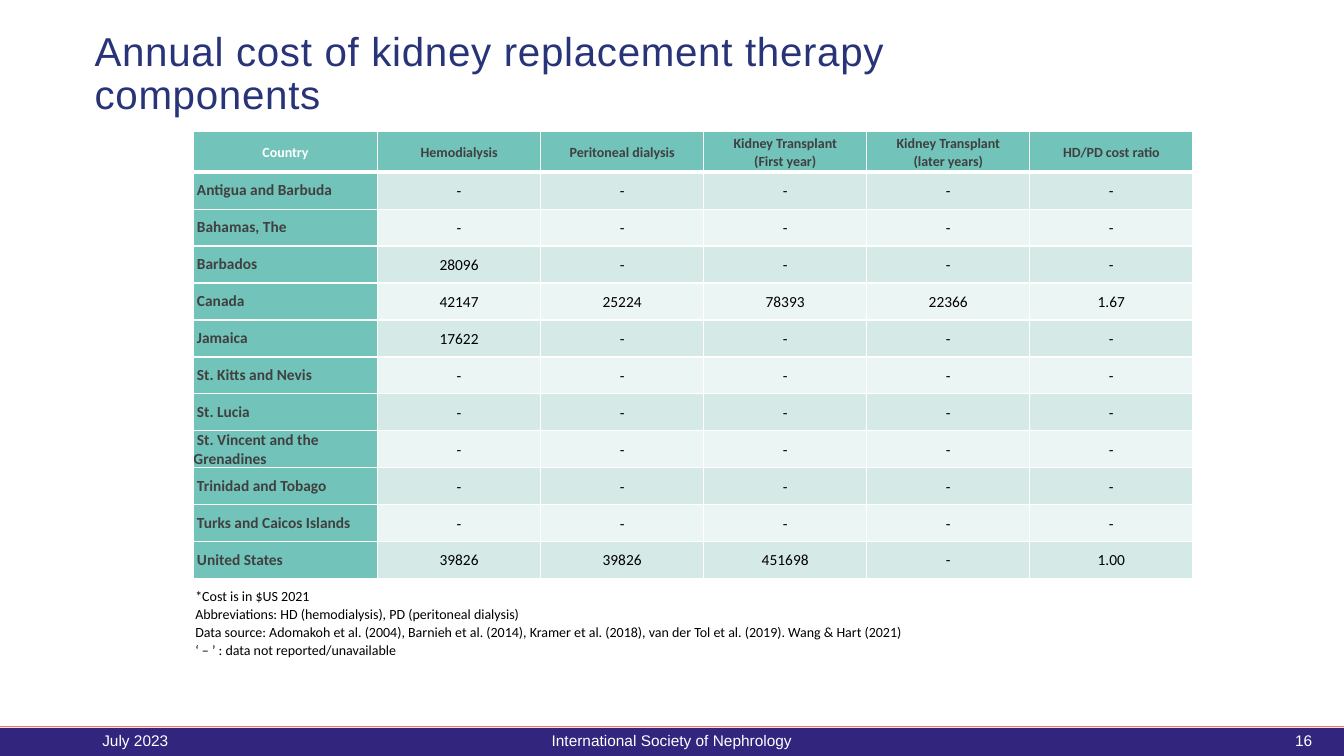
from lxml import etree
from pptx import Presentation
from pptx.dml.color import RGBColor
from pptx.enum.shapes import MSO_CONNECTOR, MSO_SHAPE
from pptx.enum.text import MSO_ANCHOR, PP_ALIGN
from pptx.oxml.ns import qn
from pptx.util import Pt

LEFT, CENTER, RIGHT = PP_ALIGN.LEFT, PP_ALIGN.CENTER, PP_ALIGN.RIGHT
TOP, MIDDLE = MSO_ANCHOR.TOP, MSO_ANCHOR.MIDDLE
RECT, LINE = MSO_SHAPE.RECTANGLE, MSO_CONNECTOR.STRAIGHT
WIDTH, HEIGHT = 960, 540
WHITE, BLACK, GRAY = "FFFFFF", "000000", "404040"
NAVY, INDIGO, CORAL = "283378", "32257E", "FE7055"
TEAL, BANDS = "72C3B9", ("D5E9E6", "EBF5F3")

HEADS = ["Country", "Hemodialysis", "Peritoneal dialysis",
         "Kidney Transplant\n(First year)", "Kidney Transplant\n(later years)",
         "HD/PD cost ratio"]
COSTS = {
    "Antigua and Barbuda": {},
    "Bahamas, The": {},
    "Barbados": {1: "28096"},
    "Canada": {1: "42147", 2: "25224", 3: "78393", 4: "22366", 5: "1.67"},
    "Jamaica": {1: "17622"},
    "St. Kitts and Nevis": {},
    "St. Lucia": {},
    "St. Vincent and the Grenadines": {},
    "Trinidad and Tobago": {},
    "Turks and Caicos Islands": {},
    "United States": {1: "39826", 2: "39826", 3: "451698", 5: "1.00"},
}
NOTES = """*Cost is in $US 2021
Abbreviations: HD (hemodialysis), PD (peritoneal dialysis)
Data source: Adomakoh et al. (2004), Barnieh et al. (2014), Kramer et al. (2018), \
van der Tol et al. (2019). Wang & Hart (2021)
‘ – ’ : data not reported/unavailable"""


def rgb(code):
    return RGBColor.from_string(code)


def style(frame, text, size, font, color, align=LEFT, bold=False, space=1):
    frame.text = text
    for par in frame.paragraphs:
        par.alignment = align
        par.line_spacing = space
        for run in par.runs:
            run.font.size = Pt(size)
            run.font.name = font
            run.font.bold = bold
            run.font.color.rgb = rgb(color)


def add_text(slide, x, y, w, h, text, size, font, color,
             align=LEFT, anchor=MIDDLE, space=1):
    box = slide.shapes.add_textbox(Pt(x), Pt(y), Pt(w), Pt(h))
    frame = box.text_frame
    frame.word_wrap = True
    frame.vertical_anchor = anchor
    style(frame, text, size, font, color, align, space=space)
    return frame


def add_edges(cell, top=1, bottom=1):
    props = cell._tc.get_or_add_tcPr()
    for side, width in (("L", 1), ("R", 1), ("T", top), ("B", bottom)):
        edge = etree.SubElement(props, qn(f"a:ln{side}"), w=str(Pt(width)))
        fill = etree.SubElement(edge, qn("a:solidFill"))
        etree.SubElement(fill, qn("a:srgbClr"), val=WHITE)


def fill_cell(cell, text, size, color, fill, pad, align=CENTER, bold=False,
              space=1, top=1, bottom=1):
    cell.vertical_anchor = MIDDLE
    cell.margin_left = cell.margin_right = Pt(pad)
    cell.margin_top, cell.margin_bottom = Pt(min(pad, 0.7)), Pt(0)
    style(cell.text_frame, text, size, "Calibri", color, align, bold, space)
    add_edges(cell, top, bottom)
    cell.fill.solid()
    cell.fill.fore_color.rgb = rgb(fill)


def add_costs(slide):
    widths = [131.5] + [116.5] * 5
    heights = [28.8] + [26.4] * len(COSTS)
    frame = slide.shapes.add_table(len(heights), len(widths), Pt(138.2), Pt(94.2),
                                   Pt(sum(widths)), Pt(sum(heights)))
    table = frame.table
    for col, width in zip(table.columns, widths):
        col.width = Pt(width)
    for row, height in zip(table.rows, heights):
        row.height = Pt(height)

    # Header row
    for c, head in enumerate(HEADS):
        fill_cell(table.cell(0, c), head, 10, GRAY if c else WHITE, TEAL, 2,
                  bold=True, space=1.06, bottom=3)

    # Country rows
    for r, (name, costs) in enumerate(COSTS.items(), 1):
        top = 3 if r == 1 else 1
        first = table.cell(r, 0)
        fill_cell(first, name, 11, GRAY, TEAL, 0, LEFT, bold=True, top=top)
        par = first.text_frame.paragraphs[0]
        par._p.get_or_add_pPr().set("indent", str(Pt(2.5)))
        for c in range(1, len(HEADS)):
            fill_cell(table.cell(r, c), costs.get(c, "-"), 11, BLACK,
                      BANDS[(r - 1) % 2], 0.7, top=top)


def add_footer(slide):
    bar = slide.shapes.add_shape(RECT, Pt(0), Pt(520), Pt(WIDTH), Pt(20))
    bar.shadow.inherit = False
    bar.fill.solid()
    bar.fill.fore_color.rgb = rgb(INDIGO)
    bar.line.fill.background()

    rule = slide.shapes.add_connector(LINE, Pt(0), Pt(519), Pt(WIDTH), Pt(519))
    rule.line.color.rgb = rgb(CORAL)
    rule.line.width = Pt(0.75)
    etree.SubElement(rule._element.spPr, qn("a:effectLst"))

    for x, w, text, align in ((66, 216, "July 2023", LEFT),
                              (318, 324, "International Society of Nephrology", CENTER),
                              (678, 266.5, "16", RIGHT)):
        add_text(slide, x, 514.8, w, 28.8, text, 11, "Arial", WHITE, align)


def main():
    deck = Presentation()
    deck.slide_width, deck.slide_height = Pt(WIDTH), Pt(HEIGHT)
    slide = deck.slides.add_slide(deck.slide_layouts[6])

    add_footer(slide)
    add_costs(slide)

    # Notes below the table
    add_text(slide, 132.4, 415.4, 594, 58.3, NOTES, 10, "Calibri", BLACK,
             anchor=TOP, space=1.07)

    # Title with slightly spaced letters
    title = add_text(slide, 60.5, 28, 666.7, 51, "Annual cost of kidney replacement "
                     "therapy components", 28.8, "Arial", NAVY, space=0.9)
    title.paragraphs[0].runs[0].font._element.set("spc", "50")

    deck.save("out.pptx")


if __name__ == "__main__":
    main()
